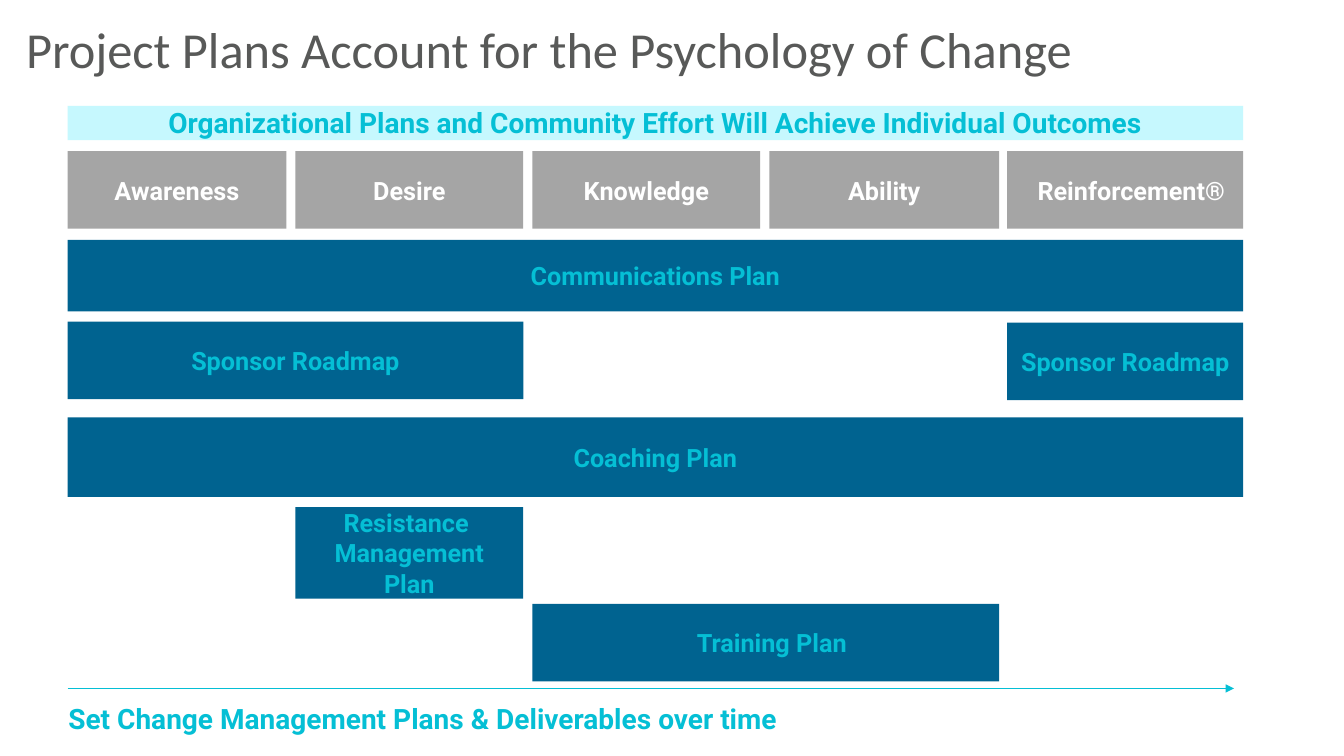
"""Build a slide that maps change management plans to five stages of change."""
from lxml import etree
from pptx import Presentation
from pptx.dml.color import RGBColor
from pptx.enum.shapes import MSO_CONNECTOR, MSO_SHAPE
from pptx.enum.text import MSO_ANCHOR, PP_ALIGN
from pptx.oxml.ns import qn
from pptx.util import Inches, Pt

RECTANGLE = MSO_SHAPE.RECTANGLE
STRAIGHT = MSO_CONNECTOR.STRAIGHT
TOP, MIDDLE = MSO_ANCHOR.TOP, MSO_ANCHOR.MIDDLE
LEFT, CENTER = PP_ALIGN.LEFT, PP_ALIGN.CENTER

COLORS = {
    "title": "585958",
    "accent": "05BFD5",
    "plan": "006390",
    "stage": "A5A5A5",
    "banner": "C6F8FE",
    "white": "FFFFFF",
}
COLUMN_STARTS = [0.67, 2.93, 5.28, 7.63, 9.99]
COLUMN_ENDS = [2.84, 5.19, 7.54, 9.91, 12.33]
INDENT = 0.12


def write_text(shape, text, size, color, alignment, anchor,
               font="Roboto", bold=True, indent=0):
    """Fill a shape with evenly formatted paragraphs."""
    frame = shape.text_frame
    frame.text = text
    frame.vertical_anchor = anchor
    for paragraph in frame.paragraphs:
        if indent:
            paragraph._p.get_or_add_pPr().set("marL", str(Inches(indent)))
        paragraph.alignment = alignment
        paragraph.font.name = font
        paragraph.font.size = Pt(size)
        paragraph.font.bold = bold
        paragraph.font.color.rgb = RGBColor.from_string(COLORS[color])


def add_bar(first, last, top, height, fill):
    """Add a rectangle that spans the columns from first to last."""
    left, right = COLUMN_STARTS[first], COLUMN_ENDS[last]
    bar = slide.shapes.add_shape(RECTANGLE, Inches(left), Inches(top),
                                 Inches(right - left), Inches(height))
    bar.shadow.inherit = False
    bar.fill.solid()
    bar.fill.fore_color.rgb = RGBColor.from_string(COLORS[fill])
    bar.line.fill.background()
    return bar


presentation = Presentation()
presentation.slide_width = Inches(13.33)
presentation.slide_height = Inches(7.5)
slide = presentation.slides.add_slide(presentation.slide_layouts[6])

title = slide.shapes.add_textbox(Inches(0.16), Inches(-0.11), Inches(12.32), Inches(1.25))
title.text_frame.word_wrap = True
write_text(title, "Project Plans Account for the Psychology of Change",
           36, "title", LEFT, MIDDLE, font="Calibri", bold=False)
title.text_frame.paragraphs[0].line_spacing = 0.9

banner = add_bar(0, 4, 1.05, 0.34, "banner")
banner.text_frame.margin_left = banner.text_frame.margin_right = 0
banner.text_frame.margin_top = banner.text_frame.margin_bottom = 0
write_text(banner, "Organizational Plans and Community Effort Will Achieve Individual Outcomes",
           20, "accent", CENTER, TOP)

stages = [("Awareness", 0), ("Desire", 0), ("Knowledge", 0),
          ("Ability", 0), ("Reinforcement®", INDENT)]
for column, (name, indent) in enumerate(stages):
    stage = add_bar(column, column, 1.5, 0.77, "stage")
    stage.text_frame.word_wrap = False
    write_text(stage, name, 18, "white", CENTER, MIDDLE, indent=indent)

plans = [
    ("Communications Plan", 0, 4, 2.38, 0.71, 0),
    ("Sponsor Roadmap", 0, 1, 3.19, 0.77, 0),
    ("Sponsor Roadmap", 4, 4, 3.2, 0.77, 0),
    ("Coaching Plan", 0, 4, 4.14, 0.79, 0),
    ("Resistance \nManagement\nPlan", 1, 1, 5.03, 0.91, 0),
    ("Training Plan", 2, 3, 5.99, 0.77, INDENT),
]
for name, first, last, top, height, indent in plans:
    plan = add_bar(first, last, top, height, "plan")
    plan.text_frame.word_wrap = False
    write_text(plan, name, 18, "accent", CENTER, MIDDLE, indent=indent)

timeline = slide.shapes.add_connector(STRAIGHT, Inches(0.67), Inches(6.83),
                                      Inches(12.24), Inches(6.83))
timeline.line.color.rgb = RGBColor.from_string(COLORS["accent"])
timeline.line.width = Pt(0.5)
etree.SubElement(timeline.line._get_or_add_ln(), qn("a:tailEnd"), type="triangle")
etree.SubElement(timeline._element.spPr, qn("a:effectLst"))

caption = slide.shapes.add_textbox(Inches(0.58), Inches(6.96), Inches(8.01), Inches(0.34))
caption.text_frame.word_wrap = True
caption.text_frame.margin_top = caption.text_frame.margin_bottom = 0
write_text(caption, "Set Change Management Plans & Deliverables over time",
           20, "accent", LEFT, TOP)

presentation.save("out.pptx")
